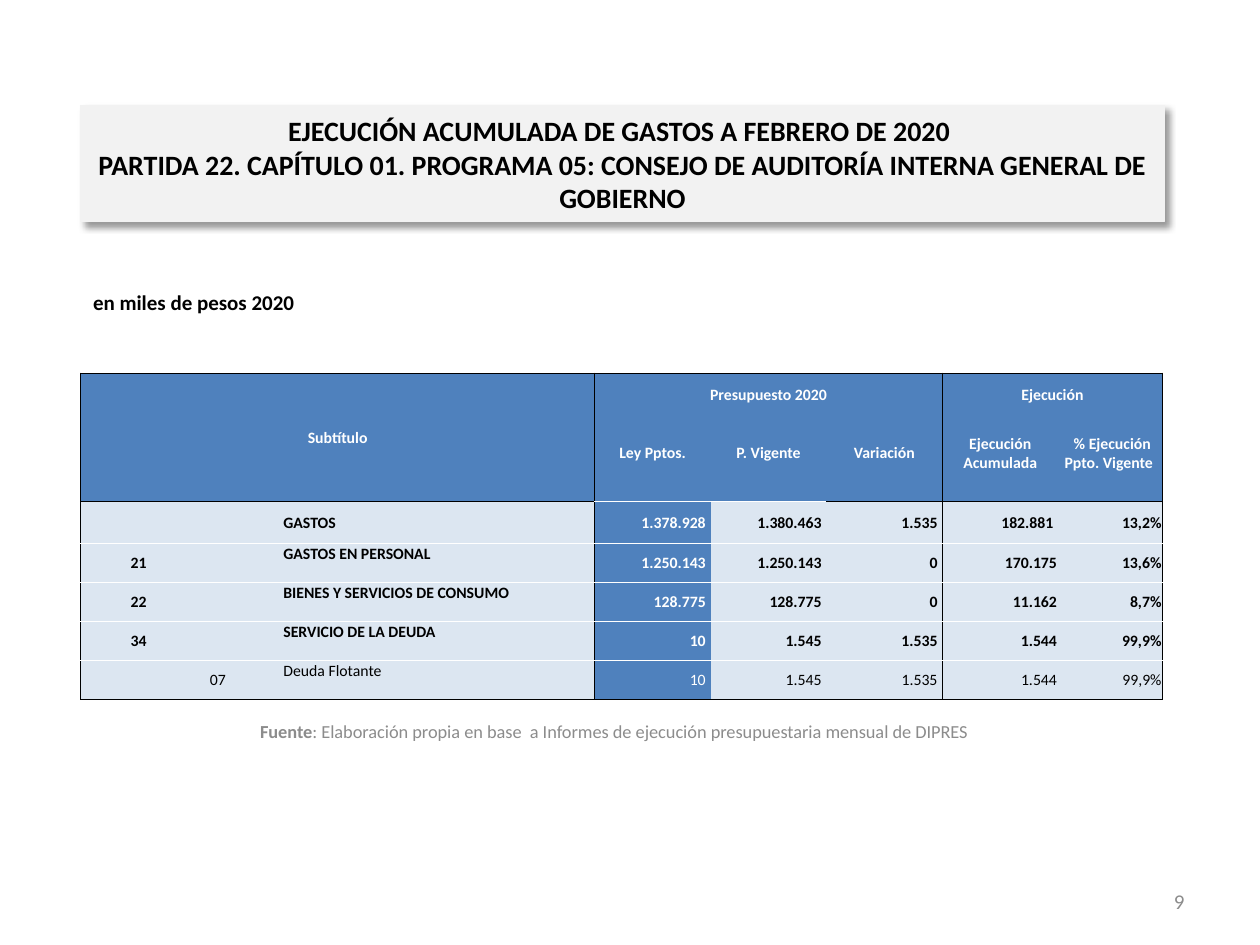
from dataclasses import dataclass
from lxml import etree
from pptx import Presentation
from pptx.dml.color import RGBColor
from pptx.enum.text import MSO_ANCHOR, MSO_AUTO_SIZE, PP_ALIGN
from pptx.oxml import parse_xml
from pptx.oxml.ns import nsdecls, qn
from pptx.util import Inches, Pt

LEFT, MID, RIGHT = PP_ALIGN.LEFT, PP_ALIGN.CENTER, PP_ALIGN.RIGHT
TOP, CENTER, BOTTOM = MSO_ANCHOR.TOP, MSO_ANCHOR.MIDDLE, MSO_ANCHOR.BOTTOM


@dataclass(frozen=True)
class Theme:
    font: str = "Calibri"
    ink: str = "000000"
    white: str = "FFFFFF"
    gray: str = "8C8C8C"
    panel: str = "F2F2F2"
    blue: str = "4F81BD"
    pale: str = "DCE6F1"
    title: float = 16
    unit: float = 12
    note: float = 10.5
    cell: float = 9


theme = Theme()


def add_run(para, text, size, color, bold=False):
    run = para.add_run()
    run.text = text
    font = run.font
    font.name, font.size, font.bold = theme.font, Pt(size), bold
    font.color.rgb = RGBColor.from_string(color)


def set_edge(props, index, side, color):
    if color:
        fill = f'<a:solidFill><a:srgbClr val="{color}"/></a:solidFill>'
    else:
        fill = "<a:noFill/>"
    props.insert(index, parse_xml(
        f'<a:ln{side} {nsdecls("a")} w="{Pt(0.5)}">{fill}</a:ln{side}>'))


deck = Presentation()
deck.slide_width, deck.slide_height = Inches(10), Inches(7.5)
slide = deck.slides.add_slide(deck.slide_layouts[5])
edge, width = Inches(0.64), Inches(8.6)

title = slide.shapes.title
title.left, title.top = edge, Inches(0.84)
title.width, title.height = width, Inches(0.92)
title.fill.solid()
title.fill.fore_color.rgb = RGBColor.from_string(theme.panel)
title.line.color.rgb = RGBColor.from_string(theme.panel)
title.line.width = Pt(0.75)
title._element.spPr.append(parse_xml(
    f'<a:effectLst {nsdecls("a")}><a:outerShdw blurRad="{Pt(4)}" dist="{Pt(3)}" '
    'dir="2700000" algn="tl" rotWithShape="0"><a:srgbClr val="000000">'
    '<a:alpha val="40000"/></a:srgbClr></a:outerShdw></a:effectLst>'))
frame = title.text_frame
frame.word_wrap = True
frame.auto_size = MSO_AUTO_SIZE.SHAPE_TO_FIT_TEXT
frame.vertical_anchor = CENTER
para = frame.paragraphs[0]
para.alignment = MID
add_run(para, "EJECUCIÓN ACUMULADA DE GASTOS A FEBRERO DE 2020 ",
        theme.title, theme.ink, True)
para.add_line_break()
add_run(para, "PARTIDA 22. CAPÍTULO 01. PROGRAMA 05: CONSEJO DE AUDITORÍA "
        "INTERNA GENERAL DE GOBIERNO", theme.title, theme.ink, True)

notes = [
    ((0.64, 2.25, 8.6, 0.33), TOP, LEFT, theme.unit, theme.ink,
     [("en miles de pesos 2020", True)]),
    ((0.64, 5.56, 8.47, 0.48), CENTER, MID, theme.note, theme.gray,
     [("Fuente", True),
      (": Elaboración propia en base  a Informes de ejecución "
       "presupuestaria mensual de DIPRES", False)]),
    ((7.17, 6.95, 2.33, 0.4), CENTER, RIGHT, theme.unit, theme.gray,
     [("9", False)]),
]
for box, anchor, align, size, color, runs in notes:
    frame = slide.shapes.add_textbox(*map(Inches, box)).text_frame
    frame.word_wrap = True
    frame.vertical_anchor = anchor
    para = frame.paragraphs[0]
    para.alignment = align
    for text, bold in runs:
        add_run(para, text, size, color, bold)

rows = [
    ["Subtítulo", "", "", "", "Presupuesto 2020", "", "", "Ejecución", ""],
    ["", "", "", "", "Ley Pptos.", "P. Vigente", "Variación",
     "Ejecución Acumulada", " % Ejecución Ppto. Vigente "],
    ["", "", "", "GASTOS", "1.378.928 ", "1.380.463 ", "1.535 ", "182.881 ", "13,2%"],
    ["21", "", "", "GASTOS EN PERSONAL", "1.250.143 ", "1.250.143 ", "0 ",
     "170.175", "13,6%"],
    ["22", "", "", "BIENES Y SERVICIOS DE CONSUMO", "128.775 ", "128.775 ", "0 ",
     "11.162", "8,7%"],
    ["34", "", "", "SERVICIO DE LA DEUDA", "10 ", "1.545 ", "1.535 ", "1.544", "99,9%"],
    ["", "07", "", "Deuda Flotante", "10 ", "1.545 ", "1.535 ", "1.544", "99,9%"],
]
wide = [0.92, 0.34, 0.34, 2.48] + [0.92] * 4 + [0.83]
high = [0.25, 0.77, 0.33] + [0.31] * 4
last = len(rows) - 1

table = slide.shapes.add_table(
    len(rows), len(wide), edge, Inches(2.96), width, Inches(sum(high))).table
for col, size in zip(table.columns, wide):
    col.width = Inches(size)
for row, size in zip(table.rows, high):
    row.height = Inches(size)
for start, end in [((0, 0), (1, 3)), ((0, 4), (0, 6)), ((0, 7), (0, 8))]:
    table.cell(*start).merge(table.cell(*end))

for r, row in enumerate(rows):
    for c, text in enumerate(row):
        cell = table.cell(r, c)
        if cell.is_spanned:
            continue
        head = r < 2
        dark = head or c == 4
        cell.fill.solid()
        cell.fill.fore_color.rgb = RGBColor.from_string(
            theme.blue if dark else theme.pale)
        cell.margin_left = cell.margin_right = cell.margin_top = Inches(0.01)
        cell.margin_bottom = 0
        cell.vertical_anchor = CENTER
        if r == 0 and c >= 4:
            cell.vertical_anchor = BOTTOM
        elif r > 2 and c == 3:
            cell.vertical_anchor = TOP
        para = cell.text_frame.paragraphs[0]
        para.alignment = MID if head or c < 3 else LEFT if c == 3 else RIGHT
        if text:
            add_run(para, text, theme.cell, theme.white if dark else theme.ink, r < last)
        else:
            etree.SubElement(para._p, qn("a:endParaRPr"), sz=str(int(theme.cell * 100)))

        right, base = c, r
        if cell.is_merge_origin:
            right += cell.span_width - 1
            base += cell.span_height - 1
        rule = theme.white if c in (4, 5) else theme.ink
        above = {0: theme.ink, 1: None, 2: rule}.get(r, theme.white)
        below = {0: None, 1: rule, last: theme.ink}.get(base, theme.white)
        sides = [
            ("L", theme.ink if c in (0, 4, 7) else None),
            ("R", theme.ink if right in (3, 6, 8) else None),
            ("T", above),
            ("B", below),
        ]
        props = cell._tc.get_or_add_tcPr()
        for index, (side, color) in enumerate(sides):
            set_edge(props, index, side, color)

deck.save("out.pptx")
